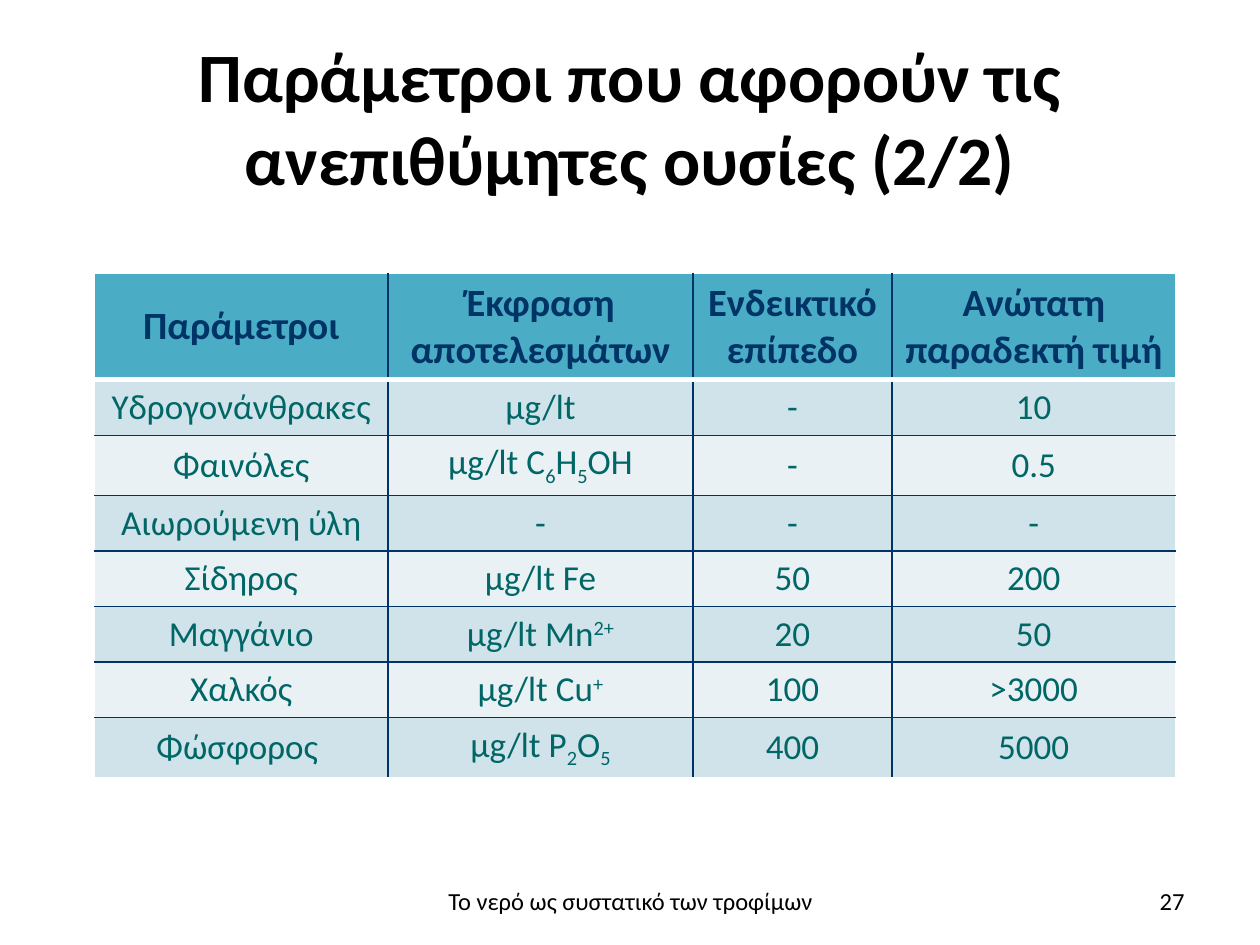
from dataclasses import dataclass

from lxml import etree
from pptx import Presentation
from pptx.dml.color import RGBColor
from pptx.enum import text
from pptx.oxml.ns import qn
from pptx.util import Inches, Pt


@dataclass(frozen=True)
class Theme:
    font: str = "Calibri"
    black: str = "000000"
    white: str = "FFFFFF"
    navy: str = "003366"
    teal: str = "006666"
    head: str = "4BACC6"
    bands: tuple = ("D0E3EA", "E9F1F5")
    title: float = 39.6
    top: float = 22
    body: float = 20
    foot: float = 14


T = Theme()
WIDE, HIGH = 10, 7.5
MID, RIGHT = text.PP_ALIGN.CENTER, text.PP_ALIGN.RIGHT
COLS = (2.33, 2.42, 1.58, 2.25)
ROW = 0.41
SHIFT = {"_": "-25000", "^": "30000"}
ROWS = (
    ("Παράμετροι", "Έκφραση αποτελεσμάτων", "Ενδεικτικό επίπεδο", "Ανώτατη παραδεκτή τιμή"),
    ("Υδρογονάνθρακες", "μg/lt", "-", "10"),
    ("Φαινόλες", "μg/lt C|_6|H|_5|OH", "-", "0.5"),
    ("Αιωρούμενη ύλη", "-", "-", "-"),
    ("Σίδηρος", "μg/lt Fe", "50", "200"),
    ("Μαγγάνιο", "μg/lt Μn|^2+", "20", "50"),
    ("Χαλκός", "μg/lt Cu|^+", "100", ">3000"),
    ("Φώσφορος ", "μg/lt P|_2|O|_5", "400", "5000"),
)


def write(frame, words, size, color, align=MID, bold=False):
    para = frame.paragraphs[0]
    para.alignment = align
    for part in words.split("|"):
        run = para.add_run()
        run.text = part.lstrip("_^")
        run.font.name = T.font
        run.font.size = Pt(size)
        run.font.bold = bold
        run.font.color.rgb = RGBColor.from_string(color)
        if part[0] in SHIFT:
            run._r.get_or_add_rPr().set("baseline", SHIFT[part[0]])


def center(frame):
    frame.word_wrap = True
    frame.auto_size = text.MSO_AUTO_SIZE.NONE
    frame.vertical_anchor = text.MSO_ANCHOR.MIDDLE


def place(shape, x, y, w, h):
    shape.left, shape.top = Inches(x * WIDE), Inches(y * HIGH)
    shape.width, shape.height = Inches(w * WIDE), Inches(h * HIGH)


def label(slide, words, x, w, align):
    box = slide.shapes.add_textbox(0, 0, 0, 0)
    place(box, x, 0.927, w, 0.053)
    center(box.text_frame)
    write(box.text_frame, words, T.foot, T.black, align)


def border(cell, row, col):
    last = len(ROWS) - 1
    edges = (
        ("a:lnL", col == 0, 1),
        ("a:lnR", col == len(COLS) - 1, 1),
        ("a:lnT", row < 2, 3 if row == 1 else 1),
        ("a:lnB", row in (0, last), 3 if row == 0 else 1),
    )
    props = cell._tc.get_or_add_tcPr()
    for spot, (tag, pale, size) in enumerate(edges):
        line = etree.Element(qn(tag), w=str(Pt(size)))
        fill = etree.SubElement(line, qn("a:solidFill"))
        etree.SubElement(fill, qn("a:srgbClr"), val=T.white if pale else T.navy)
        props.insert(spot, line)


def grid(slide):
    table = slide.shapes.add_table(
        len(ROWS), len(COLS), Inches(0.75), Inches(2.17),
        Inches(sum(COLS)), Inches(ROW * len(ROWS))).table
    for col, width in zip(table.columns, COLS):
        col.width = Inches(width)
    for r, row in enumerate(ROWS):
        top = r == 0
        for c, words in enumerate(row):
            cell = table.cell(r, c)
            cell.vertical_anchor = text.MSO_ANCHOR.MIDDLE
            cell.fill.solid()
            cell.fill.fore_color.rgb = RGBColor.from_string(
                T.head if top else T.bands[(r - 1) % 2])
            border(cell, r, c)
            write(cell.text_frame, words, T.top if top else T.body,
                  T.navy if top else T.teal, bold=top)


def main():
    deck = Presentation()
    deck.slide_width, deck.slide_height = Inches(WIDE), Inches(HIGH)
    slide = deck.slides.add_slide(deck.slide_layouts[5])
    title = slide.shapes.title
    place(title, 0.05, 0.04, 0.9, 0.167)
    center(title.text_frame)
    write(title.text_frame, "Παράμετροι που αφορούν τις ανεπιθύμητες ουσίες (2/2)",
          T.title, T.black, bold=True)
    grid(slide)
    label(slide, "Το νερό ως συστατικό των τροφίμων", 0.342, 0.317, MID)
    label(slide, "27", 0.717, 0.233, RIGHT)
    deck.save("out.pptx")


if __name__ == "__main__":
    main()
